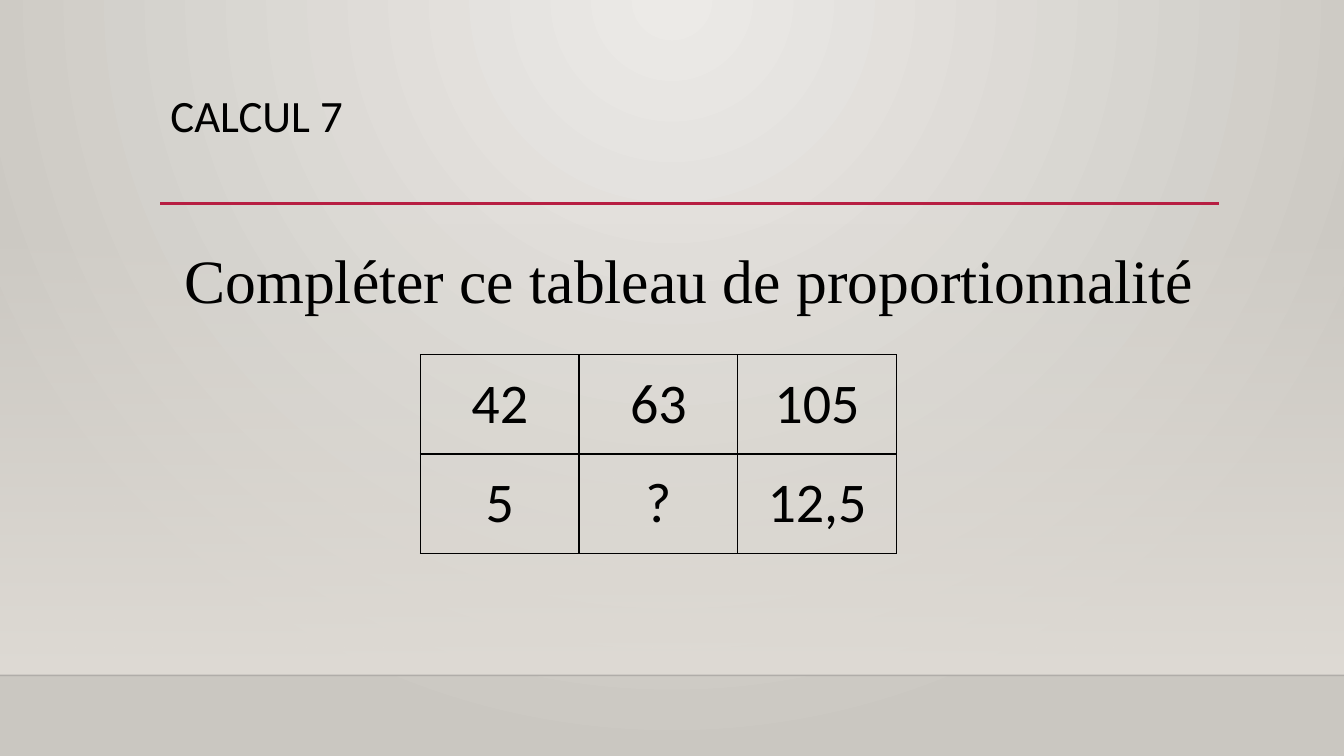
from lxml.etree import SubElement
from pptx import Presentation
from pptx.dml.color import RGBColor
from pptx.enum.shapes import MSO_CONNECTOR, MSO_SHAPE
from pptx.enum.text import MSO_ANCHOR, MSO_AUTO_SIZE, PP_ALIGN
from pptx.oxml.ns import qn
from pptx.util import Inches, Pt

WIDTH, HEIGHT = 13.33, 7.5
COLORS = {
    "glow": "ECEAE7",
    "edge": "CAC7C1",
    "wall": "DFDBD5",
    "floor": "000001",
    "accent": "B71E42",
    "text": "000000",
}
FLOOR_TOP = 6.7
COLUMN = (1.59, 10.5)  # left edge and width shared by title and body
RATIOS = [["42", "63", "105"], ["5", "?", "12,5"]]


def color(name):
    return RGBColor.from_string(COLORS[name])


def set_gradient(fill, names):
    fill.gradient()
    for stop, name in zip(fill.gradient_stops, names):
        stop.color.rgb = color(name)


def set_opacity(element, percent):
    SubElement(element, qn("a:alpha"), val=str(percent * 1000))


def add_rule(page, left, top, width, name, weight):
    rule = page.shapes.add_connector(
        MSO_CONNECTOR.STRAIGHT,
        Inches(left), Inches(top), Inches(left + width), Inches(top))
    rule.line.color.rgb = color(name)
    rule.line.width = Pt(weight)
    SubElement(rule.element.spPr, qn("a:effectLst"))
    return rule


def format_text(para, font, size):
    para.font.name = font
    para.font.size = Pt(size)
    para.font.color.rgb = color("text")
    for span in para.runs:
        span.font.name = font
        span.font.size = Pt(size)
        span.font.color.rgb = color("text")


def paint_background(page):
    # Round glow from the top centre
    set_gradient(page.background.fill, ("glow", "edge"))
    gradient = page.element.find(".//" + qn("a:gradFill"))
    gradient.remove(gradient.find(qn("a:lin")))
    circle = SubElement(gradient, qn("a:path"), path="circle")
    SubElement(circle, qn("a:fillToRect"), l="43000", t="0", r="43000", b="100000")


def add_wall(page, left, top, width, height):
    # Wall fading in towards the floor
    wall = page.shapes.add_shape(
        MSO_SHAPE.RECTANGLE, Inches(left), Inches(top), Inches(width), Inches(height))
    wall.shadow.inherit = False
    wall.line.fill.background()
    set_gradient(wall.fill, ("wall", "wall"))
    wall.fill.gradient_angle = 270
    set_opacity(wall.element.find(".//" + qn("a:srgbClr")), 0)

    # Edge of the floor
    edge = add_rule(page, left, top + height, width, "floor", 1)
    set_opacity(edge.element.find(".//" + qn("a:srgbClr")), 20)


def fill_placeholder(box, left, top, width, height, text, font, size, align, spacing):
    box.left, box.top = Inches(left), Inches(top)
    box.width, box.height = Inches(width), Inches(height)
    frame = box.text_frame
    frame.text = text
    frame.word_wrap = True
    frame.auto_size = MSO_AUTO_SIZE.NONE
    frame.vertical_anchor = MSO_ANCHOR.TOP
    para = frame.paragraphs[0]
    properties = para._p.get_or_add_pPr()
    properties.set("marL", "0")
    properties.set("indent", "0")
    SubElement(properties, qn("a:buNone"))
    para.alignment = align
    para.line_spacing = spacing
    para.space_before = Pt(0)
    format_text(para, font, size)
    # Keep the text in front of the wall
    box.element.getparent().append(box.element)


def format_cell(cell, text):
    cell.text = text
    cell.vertical_anchor = MSO_ANCHOR.MIDDLE
    para = cell.text_frame.paragraphs[0]
    para.alignment = PP_ALIGN.CENTER
    format_text(para, "Calibri", 40)
    properties = cell._tc.get_or_add_tcPr()
    for side in ("a:lnL", "a:lnR", "a:lnT", "a:lnB"):
        border = SubElement(properties, qn(side), w=str(Pt(1)))
        solid = SubElement(border, qn("a:solidFill"))
        SubElement(solid, qn("a:srgbClr"), val=COLORS["text"])
    cell.fill.background()


def add_ratio_table(page, left, top, width, height):
    rows, columns = len(RATIOS), len(RATIOS[0])
    table = page.shapes.add_table(
        rows, columns, Inches(left), Inches(top), Inches(width), Inches(height)).table
    table.first_row = False
    table.horz_banding = False
    for row, values in enumerate(RATIOS):
        for column, value in enumerate(values):
            format_cell(table.cell(row, column), value)


def build_exercise(deck):
    page = deck.slides.add_slide(deck.slide_layouts[1])
    left, width = COLUMN
    wall_top = 2.21

    # Scenery
    paint_background(page)
    add_wall(page, 0, wall_top, WIDTH, FLOOR_TOP - wall_top)
    add_rule(page, left, 2.02, width, "accent", 2.5)

    # Title, instruction and table
    fill_placeholder(page.shapes.title, left, 0.88, width, 1.15,
                     "CALCUL 7", "Calibri", 32, PP_ALIGN.LEFT, 0.9)
    fill_placeholder(page.placeholders[1], left, 2.2, width, 3.77,
                     "Compléter ce tableau de proportionnalité",
                     "Times New Roman", 44, PP_ALIGN.CENTER, 1.2)
    add_ratio_table(page, 4.17, 3.52, 4.72, 1.97)


def main():
    deck = Presentation()
    deck.slide_width, deck.slide_height = Inches(WIDTH), Inches(HEIGHT)
    build_exercise(deck)
    deck.save("out.pptx")


if __name__ == "__main__":
    main()
